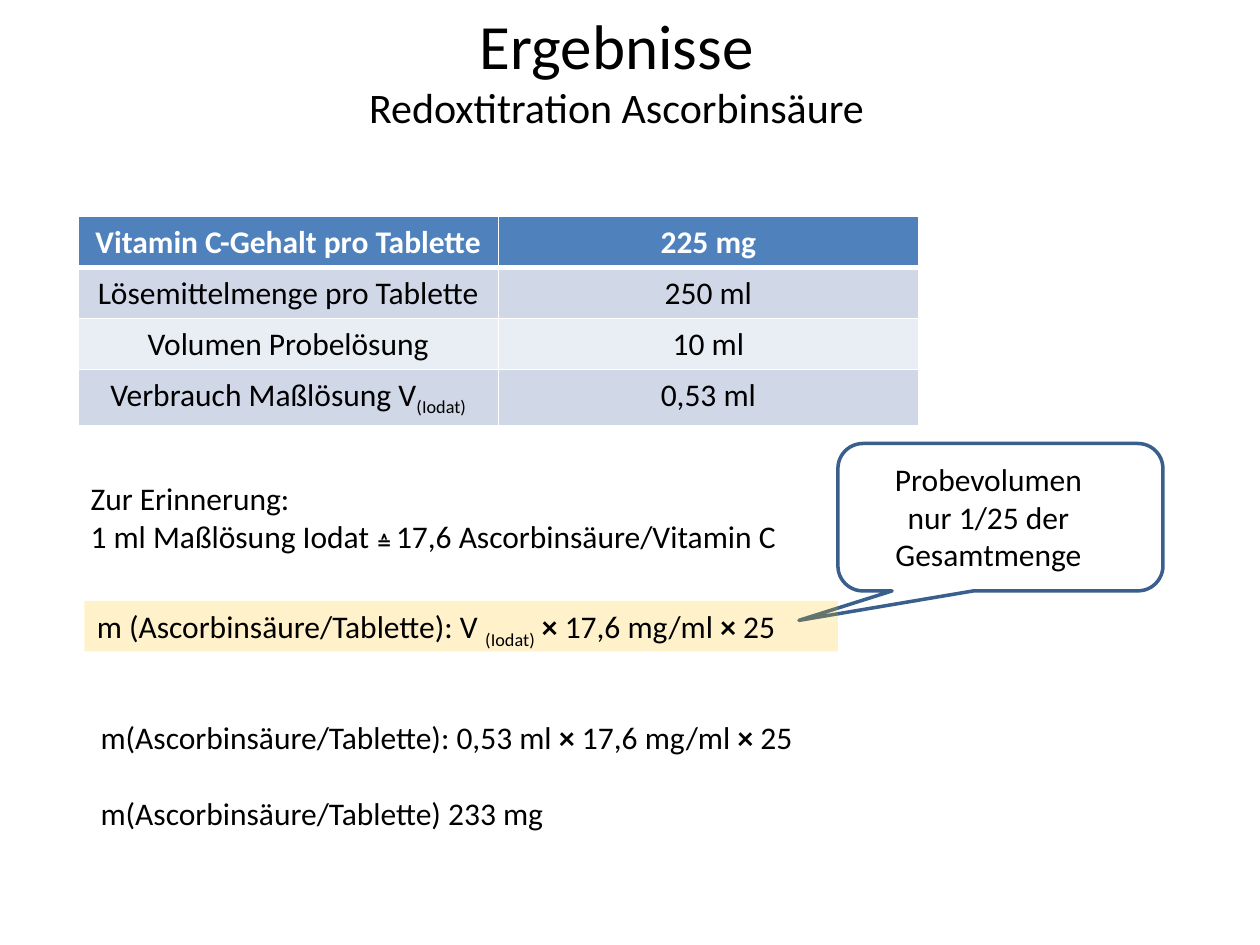
from dataclasses import dataclass

from lxml.etree import SubElement
from pptx import Presentation
from pptx.dml.color import RGBColor
from pptx.enum.shapes import MSO_SHAPE as Shape
from pptx.enum.text import MSO_ANCHOR as Anchor, PP_ALIGN as Align
from pptx.oxml.ns import qn
from pptx.util import Inches, Pt

GRID = Inches(0.1)  # the slide is 100 columns by 75 rows
BLACK, WHITE = "000000", "FFFFFF"
HEADER, BAND_DARK, BAND_LIGHT = "4F81BD", "D0D8E8", "E9EDF4"


@dataclass(frozen=True)
class Area:
    column: float
    row: float
    columns: float
    rows: float

    def emu(self) -> tuple[int, ...]:
        return tuple(round(n * GRID) for n in (self.column, self.row, self.columns, self.rows))


@dataclass(frozen=True)
class Span:
    text: str
    bold: bool | None = None
    baseline: int = 0  # percent of the text size


@dataclass(frozen=True)
class Line:
    spans: tuple[Span, ...]
    size: int = 18
    space_before: int = 0


@dataclass(frozen=True)
class TextBlock:
    area: Area
    lines: tuple[Line, ...]
    align: Align = Align.LEFT
    wrap: bool = False


def line(*parts: str | Span, size: int = 18, space_before: int = 0) -> Line:
    spans = tuple(Span(part) if isinstance(part, str) else part for part in parts)
    return Line(spans, size, space_before)


def color(hex_value: str) -> RGBColor:
    return RGBColor.from_string(hex_value)


def write_lines(frame, lines: tuple[Line, ...], align: Align,
                text_color: str = BLACK, bold: bool = False) -> None:
    for index, content in enumerate(lines):
        para = frame.paragraphs[0] if index == 0 else frame.add_paragraph()
        para.alignment = align
        para.space_before = Pt(content.space_before)
        para.font.name, para.font.size = "Calibri", Pt(content.size)
        para.font.bold = bold
        para.font.color.rgb = color(text_color)
        for part in content.spans:
            span = para.add_run()
            span.text = part.text
            span.font.bold = part.bold
            if part.baseline:
                span.font._element.set("baseline", str(part.baseline * 1000))


def add_text(slide, block: TextBlock) -> None:
    frame = slide.shapes.add_textbox(*block.area.emu()).text_frame
    frame.word_wrap = block.wrap
    write_lines(frame, block.lines, block.align)


def set_borders(cell, bottom_width: int) -> None:
    """Draw white cell borders, which must come before the cell's fill."""
    properties = cell._tc.get_or_add_tcPr()
    widths = {"a:lnL": 1, "a:lnR": 1, "a:lnT": 1, "a:lnB": bottom_width}
    for index, (tag, width) in enumerate(widths.items()):
        border = SubElement(properties, qn(tag), w=str(Pt(width)))
        fill = SubElement(border, qn("a:solidFill"))
        SubElement(fill, qn("a:srgbClr"), val=WHITE)
        properties.insert(index, border)


def add_table(slide, area: Area, rows: tuple[tuple[Line, ...], ...]) -> None:
    table = slide.shapes.add_table(len(rows), len(rows[0]), *area.emu()).table
    for row_index, row in enumerate(rows):
        is_header = row_index == 0
        band = BAND_DARK if row_index % 2 else BAND_LIGHT
        for column_index, content in enumerate(row):
            cell = table.cell(row_index, column_index)
            cell.fill.solid()
            cell.fill.fore_color.rgb = color(HEADER if is_header else band)
            set_borders(cell, 3 if is_header else 1)
            write_lines(cell.text_frame, (content,), Align.CENTER,
                        WHITE if is_header else BLACK, is_header)


def add_callout(slide, area: Area) -> None:
    callout = slide.shapes.add_shape(Shape.ROUNDED_RECTANGULAR_CALLOUT, *area.emu())
    callout.shadow.inherit = False
    callout.fill.background()
    callout.line.color.rgb = color("3A5F8C")
    callout.line.width = Pt(2)
    for index, value in enumerate((-0.62, 0.7, 0.17)):
        callout.adjustments[index] = value


def add_formula_bar(slide, area: Area, formula: Line) -> None:
    bar = slide.shapes.add_shape(Shape.RECTANGLE, *area.emu())
    bar.shadow.inherit = False
    bar.line.fill.background()
    bar.fill.solid()
    bar.fill.fore_color.rgb = color("FFC000")
    tint = bar._element.spPr.find(qn("a:solidFill")).find(qn("a:srgbClr"))
    SubElement(tint, qn("a:alpha"), val="21000")
    bar.text_frame.vertical_anchor = Anchor.TOP
    write_lines(bar.text_frame, (formula,), Align.LEFT)


TIMES = Span("×", bold=True)
IODATE = Span("(Iodat)", baseline=-25)

TITLE = TextBlock(
    Area(28.1, 0, 41.7, 11.1),
    (line("Ergebnisse", size=36), line("Redoxtitration Ascorbinsäure", size=24)),
    Align.CENTER,
)
MEASUREMENTS = (
    (line("Vitamin C-Gehalt pro Tablette"), line("225 mg")),
    (line("Lösemittelmenge pro Tablette"), line("250 ml")),
    (line("Volumen Probelösung"), line("10 ml")),
    (line("Verbrauch Maßlösung V", IODATE), line("0,53 ml")),
)
REMINDER = TextBlock(
    Area(6.2, 37.5, 67.2, 10.1),
    (line("Zur Erinnerung:"),
     line("1 ml Maßlösung Iodat ", Span("≙ ", bold=True, baseline=-6),
          "17,6 Ascorbinsäure/Vitamin C")),
    wrap=True,
)
CALLOUT_TEXT = TextBlock(
    Area(69.7, 36, 17.5, 10.1),
    (line("Probevolumen"), line("nur 1/25 der"), line("Gesamtmenge")),
    Align.CENTER,
)
FORMULA = line("m (Ascorbinsäure/Tablette): V ", IODATE, " ", TIMES,
               " 17,6 mg/ml ", TIMES, " 25")
CALCULATION = TextBlock(
    Area(7, 56.5, 58.7, 10.1),
    (line("m(Ascorbinsäure/Tablette): 0,53 ml ", TIMES, " 17,6 mg/ml ", TIMES, " 25"),
     line("m(Ascorbinsäure/Tablette) 233 mg", space_before=22)),
)


def main() -> None:
    deck = Presentation()
    deck.slide_width, deck.slide_height = 100 * GRID, 75 * GRID
    page = deck.slides.add_slide(deck.slide_layouts[6])
    add_text(page, CALCULATION)
    add_text(page, TITLE)
    add_table(page, Area(6.2, 17.2, 66.7, 16.2), MEASUREMENTS)
    add_text(page, REMINDER)
    add_callout(page, Area(66.5, 35.2, 25.8, 11.7))
    add_text(page, CALLOUT_TEXT)
    add_formula_bar(page, Area(6.7, 47.7, 59.8, 4), FORMULA)
    deck.save("out.pptx")


if __name__ == "__main__":
    main()
